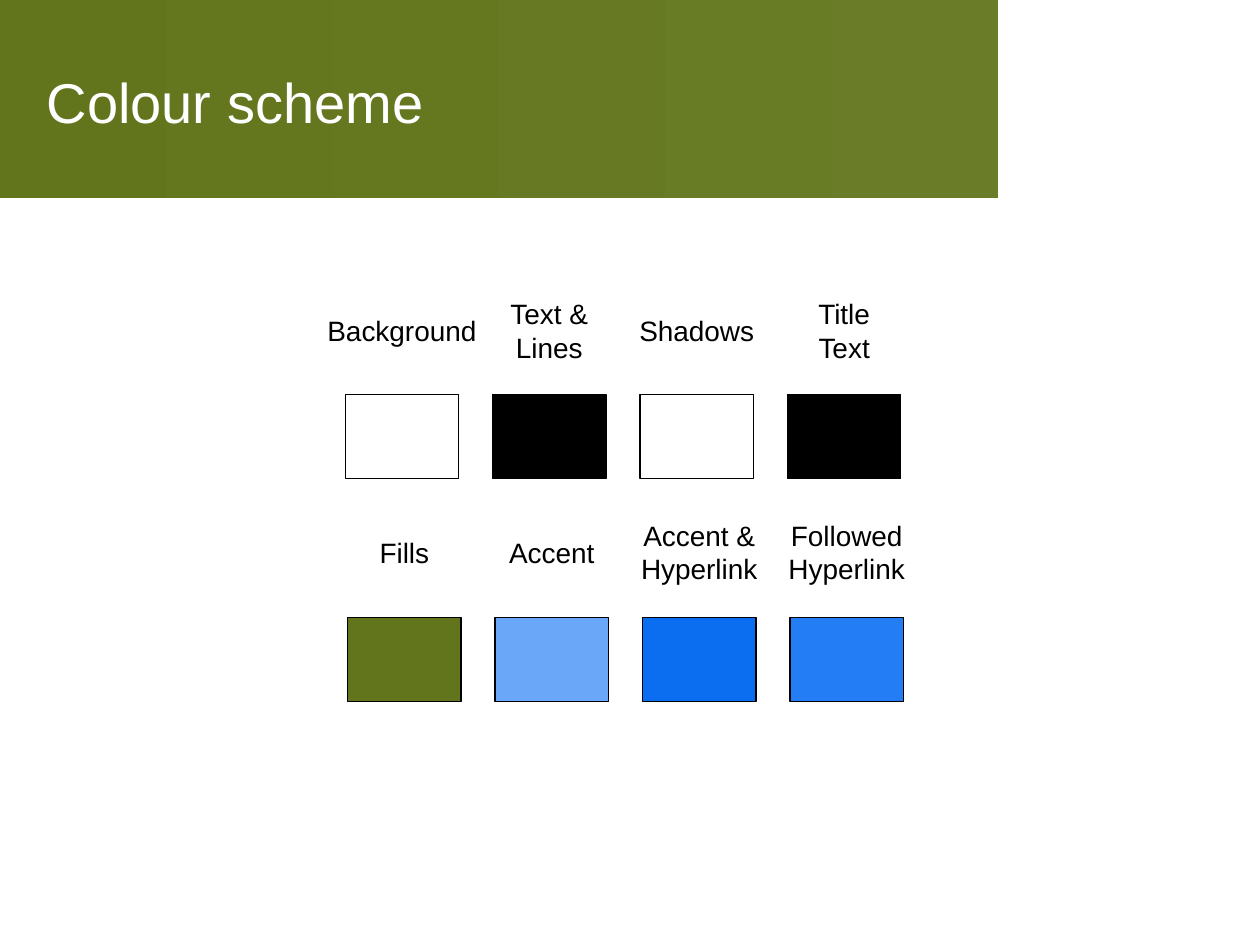
"""Build a slide that shows the eight colours of a colour scheme."""
from pptx import Presentation
from pptx.dml.color import RGBColor
from pptx.enum.shapes import MSO_SHAPE
from pptx.enum.text import MSO_ANCHOR, PP_ALIGN
from pptx.util import Inches, Pt

RECTANGLE = MSO_SHAPE.RECTANGLE
MIDDLE = MSO_ANCHOR.MIDDLE
LEFT, CENTER = PP_ALIGN.LEFT, PP_ALIGN.CENTER
FONT = "Arial"
COLORS = {
    "white": "FFFFFF",
    "black": "000000",
    "olive": "62751C",
    "light olive": "6A7C27",
    "pale blue": "6BA7F8",
    "deep blue": "0B6DEF",
    "bright blue": "237DF5",
}
SCHEME_ROWS = [
    (2.74, 2.3, 3.13, [
        ("Background", "white"),
        ("Text &\nLines", "black"),
        ("Shadows", "white"),
        ("Title\vText", "black"),
    ]),
    (2.76, 4.06, 4.9, [
        ("Fills", "olive"),
        ("Accent", "pale blue"),
        ("Accent &\nHyperlink", "deep blue"),
        ("Followed\nHyperlink", "bright blue"),
    ]),
]
COLUMN_STEP = 1.17
SWATCH_WIDTH, SWATCH_HEIGHT = 0.9, 0.67
LABEL_WIDTH, LABEL_HEIGHT = 1.4, 0.64


def rgb(name):
    return RGBColor.from_string(COLORS[name])


def style_text(frame, size, color, alignment):
    frame.vertical_anchor = MIDDLE
    for paragraph in frame.paragraphs:
        paragraph.alignment = alignment
        paragraph.font.name = FONT
        paragraph.font.size = Pt(size)
        paragraph.font.color.rgb = rgb(color)


prs = Presentation()
prs.slide_width, prs.slide_height = Inches(10), Inches(7.5)
slide = prs.slides.add_slide(prs.slide_layouts[5])
shapes = slide.shapes

band = shapes.add_shape(RECTANGLE, 0, 0, Inches(7.92), Inches(1.57))
band.shadow.inherit = False
band.line.fill.background()
band.fill.gradient()
band.fill.gradient_angle = 0
for stop, position, color in zip(
    band.fill.gradient_stops, (0, 1), ("olive", "light olive")
):
    stop.position = position
    stop.color.rgb = rgb(color)
title = shapes.title
title._element.addprevious(band._element)

title.left, title.top = Inches(0.27), Inches(0.3)
title.width, title.height = Inches(7.48), Inches(1.01)
title.text_frame.text = "Colour scheme"
style_text(title.text_frame, 32, "white", LEFT)

for row_left, label_top, swatch_top, entries in SCHEME_ROWS:
    for column, (name, color) in enumerate(entries):
        swatch_left = row_left + column * COLUMN_STEP
        swatch = shapes.add_shape(
            RECTANGLE, Inches(swatch_left), Inches(swatch_top),
            Inches(SWATCH_WIDTH), Inches(SWATCH_HEIGHT),
        )
        swatch.shadow.inherit = False
        swatch.fill.solid()
        swatch.fill.fore_color.rgb = rgb(color)
        swatch.line.color.rgb = rgb("black")
        swatch.line.width = Pt(0.75)

        label_left = swatch_left - (LABEL_WIDTH - SWATCH_WIDTH) / 2
        label = shapes.add_textbox(
            Inches(label_left), Inches(label_top),
            Inches(LABEL_WIDTH), Inches(LABEL_HEIGHT),
        )
        label.text_frame.word_wrap = False
        label.text_frame.text = name
        style_text(label.text_frame, 16, "black", CENTER)

prs.save("out.pptx")
